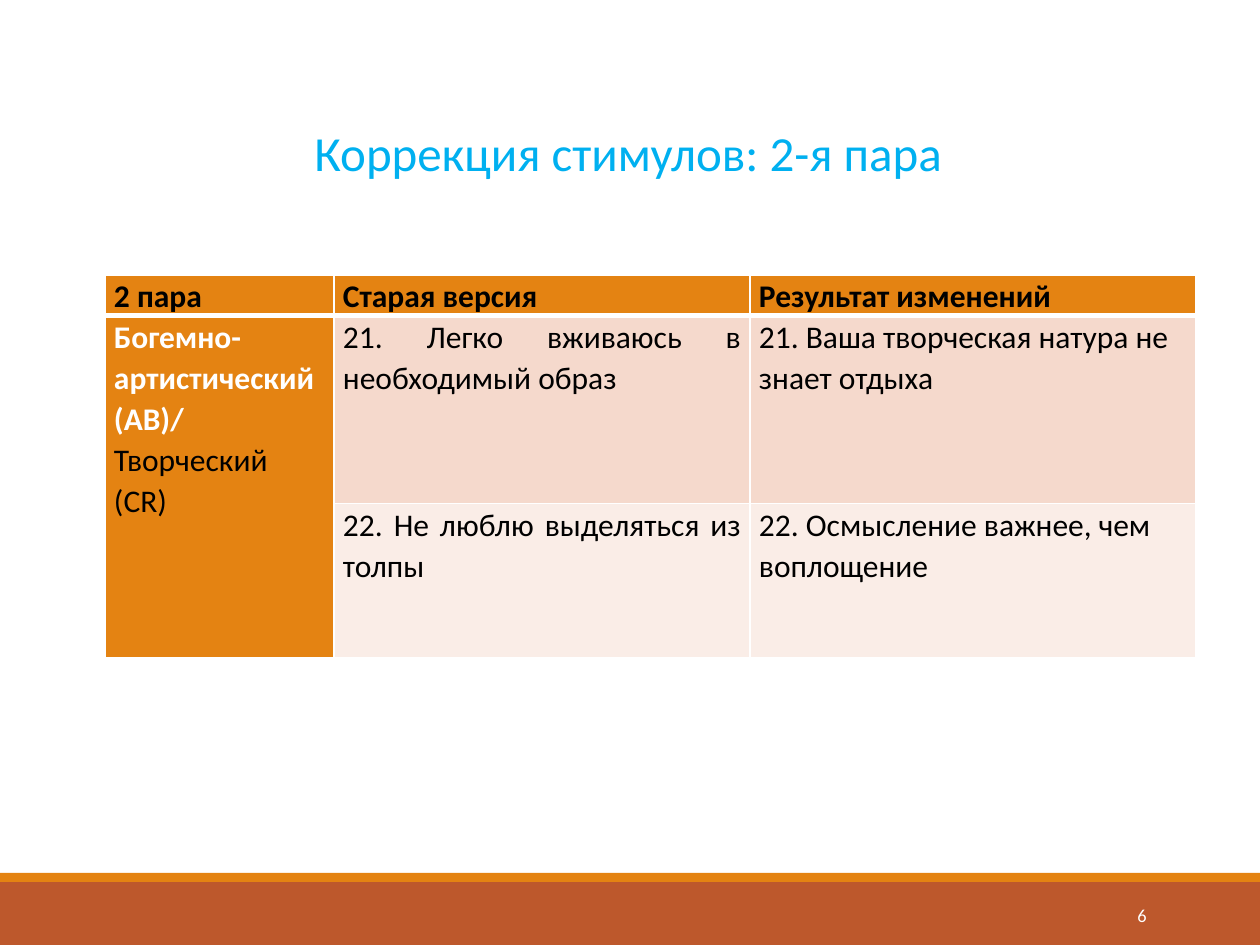
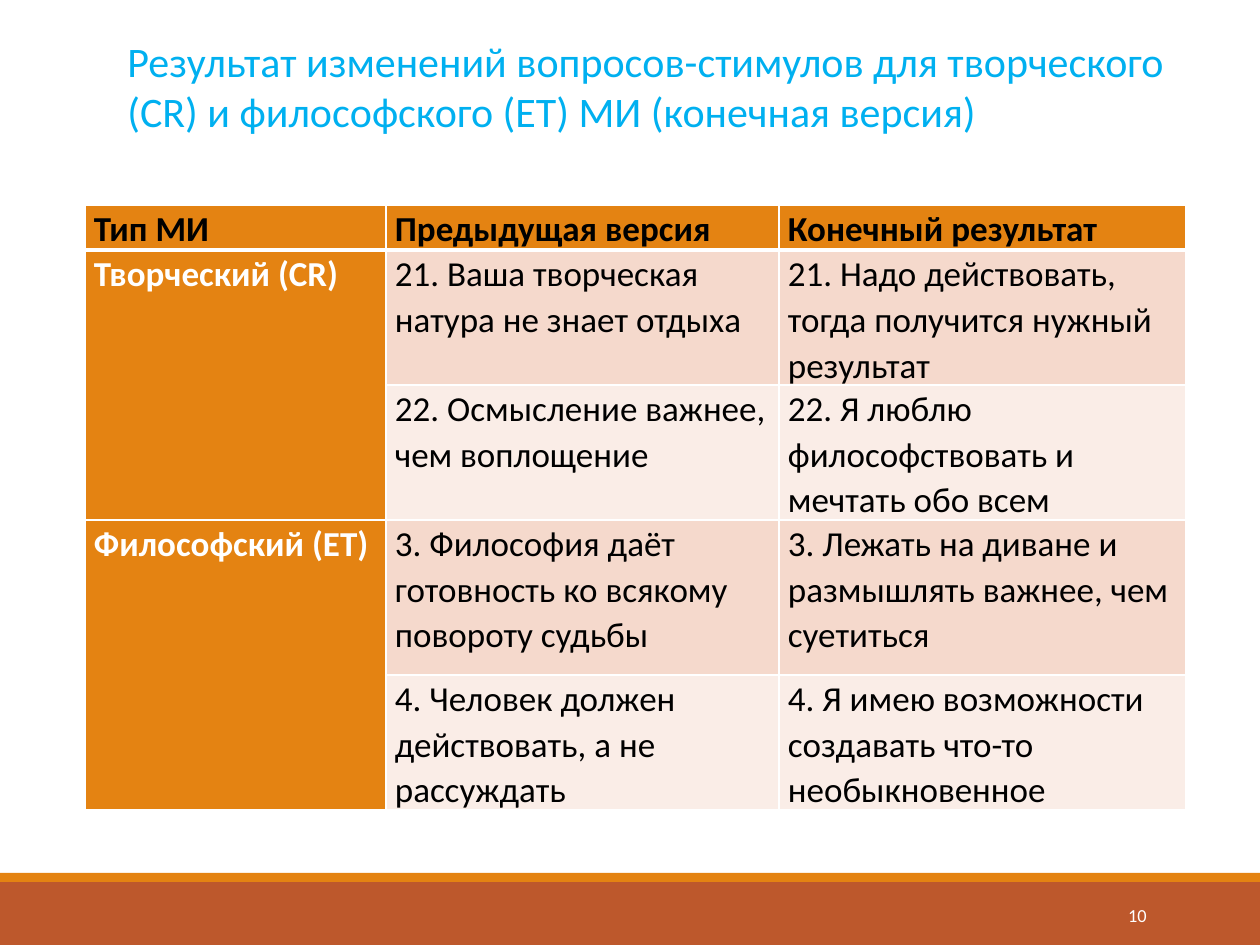
"""Build two slides with tables of revised questionnaire stimuli."""
import lxml.etree
import pptx
import pptx.dml.color
import pptx.enum.shapes
import pptx.enum.text
import pptx.oxml.ns
import pptx.util

RGB = pptx.dml.color.RGBColor
ALIGN = pptx.enum.text.PP_ALIGN
ANCHOR = pptx.enum.text.MSO_ANCHOR
WHITE = RGB(0xFF, 0xFF, 0xFF)
BLACK = RGB(0x00, 0x00, 0x00)
TITLE_BLUE = RGB(0x00, 0xB0, 0xF0)
ORANGE = RGB(0xE4, 0x83, 0x12)
RUST = RGB(0xBD, 0x58, 0x2C)
ROW_TINTS = (RGB(0xF5, 0xD9, 0xCC), RGB(0xFA, 0xED, 0xE7))
FONT = "Calibri"
PX = 914400 // 126
WIDTH, HEIGHT = 1260, 945
BANDS = [(RUST, 882, 63), (ORANGE, 873, 9)]
NUMBER_BOX = (1023, 890, 136, 50)

SLIDES = [
    {
        "number": "6",
        "title": "Коррекция стимулов: 2-я пара",
        "title_box": (302, 116, 754, 72),
        "title_size": 28,
        "origin": (105, 275),
        "cols": [229, 416, 446],
        "rows": [39, 188, 154],
        "size": 18,
        "justified": (0, 1),
        "header": ["2 пара", "Старая версия", "Результат изменений"],
        "groups": [
            ("Богемно-артистический (AB)/ ", "Творческий (CR)", [
                ("21. Легко вживаюсь в необходимый образ",
                 "21. Ваша творческая натура не знает отдыха"),
                ("22. Не люблю выделяться из толпы",
                 "22. Осмысление важнее, чем воплощение"),
            ]),
        ],
    },
    {
        "number": "10",
        "title": "Результат изменений вопросов-стимулов для творческого (CR) "
                 "и философского (ET) МИ (конечная версия)",
        "title_box": (115, 29, 1090, 97),
        "title_size": 24,
        "origin": (85, 205),
        "cols": [301, 393, 407],
        "rows": [44, 135, 135, 155, 135],
        "size": 20,
        "justified": (0,),
        "header": ["Тип МИ", "Предыдущая версия", "Конечный результат"],
        "groups": [
            ("Творческий (CR)", "", [
                ("21. Ваша творческая натура не знает отдыха",
                 "21. Надо действовать, тогда получится нужный результат"),
                ("22. Осмысление важнее, чем воплощение",
                 "22. Я люблю философствовать и мечтать обо всем"),
            ]),
            ("Философский (ET)", "", [
                ("3. Философия даёт готовность ко всякому повороту судьбы",
                 "3. Лежать на диване и размышлять важнее, чем суетиться"),
                ("4. Человек должен действовать, а не рассуждать",
                 "4. Я имею возможности создавать что-то необыкновенное"),
            ]),
        ],
    },
]


def emu(*lengths):
    return [length * PX for length in lengths]


def add_text(tf, text, size=18, color=BLACK, bold=False, align=ALIGN.LEFT, spacing=None):
    p = tf.paragraphs[0]
    p.alignment = align
    if spacing:
        p.line_spacing = spacing
    r = p.add_run()
    r.text = text
    r.font.name = FONT
    r.font.size = pptx.util.Pt(size)
    r.font.bold = bold
    r.font.color.rgb = color


def add_text_box(s, box, text, anchor=ANCHOR.TOP, **style):
    tf = s.shapes.add_textbox(*emu(*box)).text_frame
    tf.word_wrap = True
    tf.vertical_anchor = anchor
    add_text(tf, text, **style)


def add_frame(s, number):
    for color, top, height in BANDS:
        sp = s.shapes.add_shape(pptx.enum.shapes.MSO_SHAPE.RECTANGLE,
                                *emu(0, top, WIDTH, height))
        sp.shadow.inherit = False
        sp.fill.solid()
        sp.fill.fore_color.rgb = color
        sp.line.fill.background()
    add_text_box(s, NUMBER_BOX, number, anchor=ANCHOR.MIDDLE,
                 size=10.5, color=WHITE, align=ALIGN.RIGHT)


def set_borders(cell, row):
    qn = pptx.oxml.ns.qn
    tc_pr = cell._tc.get_or_add_tcPr()
    widths = {"lnL": 1, "lnR": 1, "lnT": 3 if row == 1 else 1, "lnB": 3 if row == 0 else 1}
    for i, (side, width) in enumerate(widths.items()):
        ln = lxml.etree.Element(qn("a:" + side), w=str(pptx.util.Pt(width)))
        fill = lxml.etree.SubElement(ln, qn("a:solidFill"))
        lxml.etree.SubElement(fill, qn("a:srgbClr"), val=str(WHITE))
        tc_pr.insert(i, ln)


def add_stimuli_table(s, data):
    cols, rows = data["cols"], data["rows"]
    table = s.shapes.add_table(len(rows), len(cols),
                               *emu(*data["origin"], sum(cols), sum(rows))).table
    for column, width in zip(table.columns, cols):
        column.width = width * PX
    for row, height in zip(table.rows, rows):
        row.height = height * PX
    for i in range(len(rows)):
        for j in range(len(cols)):
            cell = table.cell(i, j)
            cell.margin_left = cell.margin_right = 9 * PX
            cell.margin_top = cell.margin_bottom = 0
            cell.fill.solid()
            cell.fill.fore_color.rgb = ORANGE if i == 0 or j == 0 else ROW_TINTS[(i - 1) % 2]
            set_borders(cell, i)

    def write(i, j, text, **style):
        align = ALIGN.JUSTIFY if j in data["justified"] else ALIGN.LEFT
        add_text(table.cell(i, j).text_frame, text, size=data["size"],
                 align=align, spacing=1.07, **style)

    for j, text in enumerate(data["header"]):
        write(0, j, text, bold=True)
    i = 1
    for old_type, new_type, pairs in data["groups"]:
        table.cell(i, 0).merge(table.cell(i + len(pairs) - 1, 0))
        write(i, 0, old_type, bold=True, color=WHITE)
        if new_type:
            write(i, 0, new_type)
        for pair in pairs:
            for j, text in enumerate(pair, 1):
                write(i, j, text)
            i += 1


def main():
    prs = pptx.Presentation()
    prs.slide_width, prs.slide_height = emu(WIDTH, HEIGHT)
    for data in SLIDES:
        s = prs.slides.add_slide(prs.slide_layouts[6])
        add_frame(s, data["number"])
        add_text_box(s, data["title_box"], data["title"],
                     size=data["title_size"], color=TITLE_BLUE)
        add_stimuli_table(s, data)
    prs.save("out.pptx")


if __name__ == "__main__":
    main()
